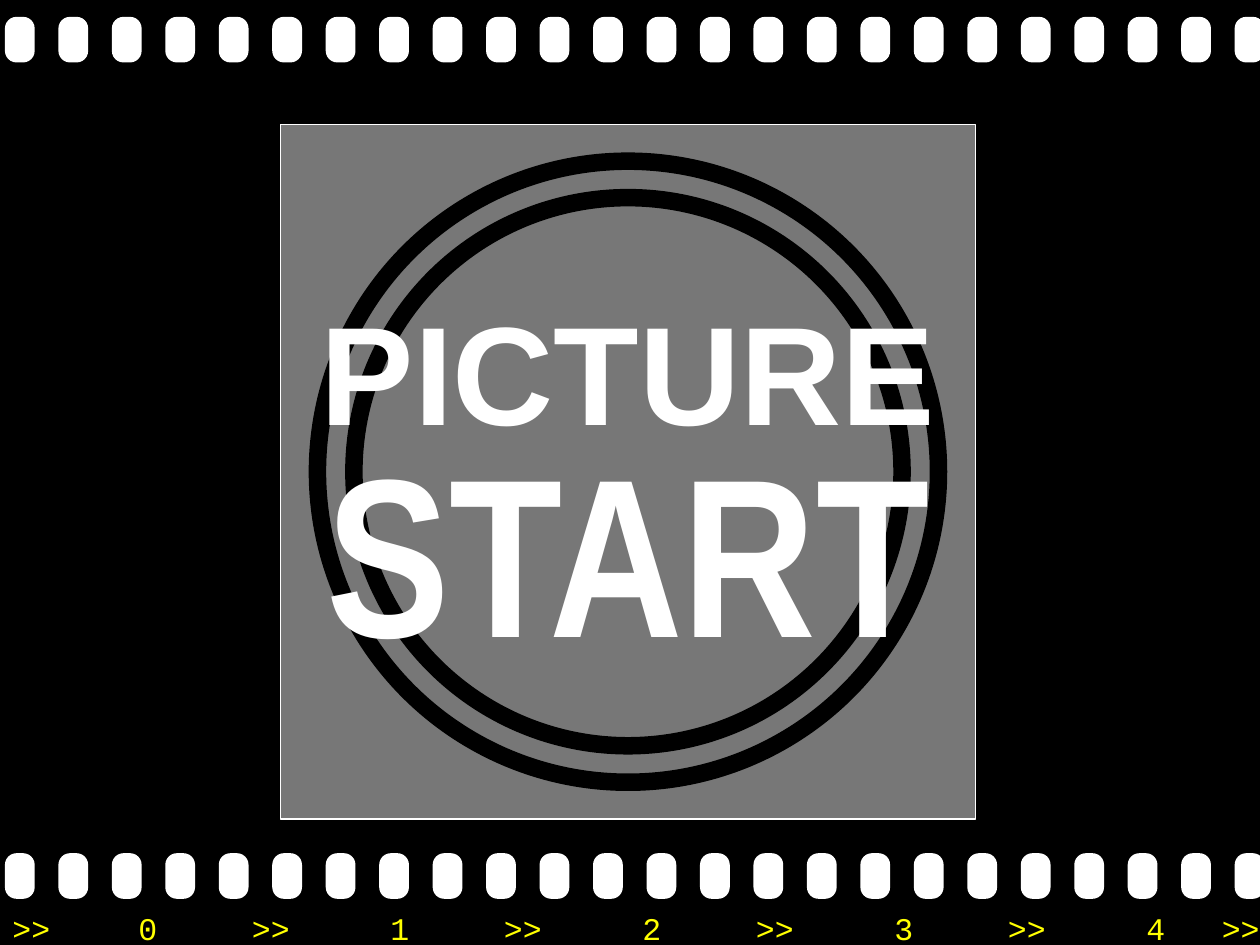
from lxml import etree
from pptx import Presentation
from pptx.dml.color import RGBColor
from pptx.enum.shapes import MSO_SHAPE
from pptx.enum.text import MSO_ANCHOR, MSO_AUTO_SIZE, PP_ALIGN
from pptx.oxml.ns import qn
from pptx.util import Cm, Pt

ROUNDED = MSO_SHAPE.ROUNDED_RECTANGLE
RECTANGLE = MSO_SHAPE.RECTANGLE
OVAL = MSO_SHAPE.OVAL
MIDDLE = MSO_ANCHOR.MIDDLE
NO_AUTOFIT = MSO_AUTO_SIZE.NONE
CENTER = PP_ALIGN.CENTER
LEFT = PP_ALIGN.LEFT

COLORS = {
    "film": "000000",
    "light": "FFFFFF",
    "frame": "777777",
    "counter": "FFFF00",
}
HOLES_PER_ROW = 24
FIRST_HOLE, LAST_HOLE = 0.1, 24.89
FRAME_CENTER = (12.66, 9.51)
FRAME_COUNT = 5
FRAME_STEP = 5.08


def rgb(name):
    return RGBColor.from_string(COLORS[name])


def style_shape(shape, fill=None, line=None, weight=0):
    shape.shadow.inherit = False
    if fill:
        shape.fill.solid()
        shape.fill.fore_color.rgb = rgb(fill)
    else:
        shape.fill.background()
    if line:
        shape.line.color.rgb = rgb(line)
        shape.line.width = Pt(weight)
    else:
        shape.line.fill.background()


def add_sprocket_row(slide, top):
    row = slide.shapes.add_group_shape()
    step = (LAST_HOLE - FIRST_HOLE) / (HOLES_PER_ROW - 1)
    for index in range(HOLES_PER_ROW):
        hole = row.shapes.add_shape(
            ROUNDED, Cm(FIRST_HOLE + index * step), Cm(top), Cm(0.6), Cm(0.92))
        hole.adjustments[0] = 0.39
        style_shape(hole, fill="light")


def add_centered(slide, kind, size, center=FRAME_CENTER, **style):
    x, y = center
    shape = slide.shapes.add_shape(
        kind, Cm(x - size / 2), Cm(y - size / 2), Cm(size), Cm(size))
    style_shape(shape, **style)


def set_font(paragraph, name, size, color, bold=False):
    font = paragraph.font
    font.name = name
    font.size = Pt(size)
    font.bold = bold
    font.color.rgb = rgb(color)


def set_tab_stops(paragraph, stops):
    properties = paragraph._p.get_or_add_pPr()
    tabs = etree.Element(qn("a:tabLst"))
    for stop in stops:
        etree.SubElement(tabs, qn("a:tab"), pos=str(Cm(stop)), algn="l")
    defaults = properties.find(qn("a:defRPr"))
    if defaults is None:
        properties.append(tabs)
    else:
        defaults.addprevious(tabs)


def add_frame_counter(slide):
    box = slide.shapes.add_textbox(Cm(0), Cm(18.21), Cm(25.91), Cm(1.02))
    box.text_frame.word_wrap = True
    counter = box.text_frame.paragraphs[0]
    counter.alignment = LEFT
    marks, stops = [">>"], []
    for number in range(FRAME_COUNT):
        number_at = 2.54 + number * FRAME_STEP
        is_last = number == FRAME_COUNT - 1
        marks += [str(number), ">>"]
        stops += [number_at, number_at + (1.52 if is_last else 2.29)]
    counter.text = "\t".join(marks)
    set_font(counter, "Courier New", 18, "counter")
    set_tab_stops(counter, stops)


def fill_title(slide):
    title = slide.shapes.title
    title.left, title.top = Cm(5.64), Cm(5)
    title.width, title.height = Cm(14.05), Cm(9.53)
    frame = title.text_frame
    frame.word_wrap = False
    frame.auto_size = NO_AUTOFIT
    frame.vertical_anchor = MIDDLE
    frame.margin_left = frame.margin_right = 0
    frame.margin_top = frame.margin_bottom = 0
    picture = frame.paragraphs[0]
    start = frame.add_paragraph()
    start.line_spacing = 0.85
    for line, text, font, size in (
        (picture, "PICTURE", "Arial", 80),
        (start, "START", "Arial Narrow", 129),
    ):
        line.text = text
        line.alignment = CENTER
        set_font(line, font, size, "light", bold=True)
    title.element.getparent().append(title.element)


def main():
    deck = Presentation()
    deck.slide_width, deck.slide_height = Cm(25.4), Cm(19.05)
    slide = deck.slides.add_slide(deck.slide_layouts[5])
    slide.background.fill.solid()
    slide.background.fill.fore_color.rgb = rgb("film")

    for top in (17.2, 0.34):
        add_sprocket_row(slide, top)
    add_frame_counter(slide)

    add_centered(slide, OVAL, 14.12, (12.7, 9.47), line="film", weight=10)
    add_centered(slide, RECTANGLE, 14, fill="frame", line="light", weight=0.75)
    for diameter in (11.05, 12.52):
        add_centered(slide, OVAL, diameter, line="film", weight=10)
    fill_title(slide)

    deck.save("out.pptx")


if __name__ == "__main__":
    main()
